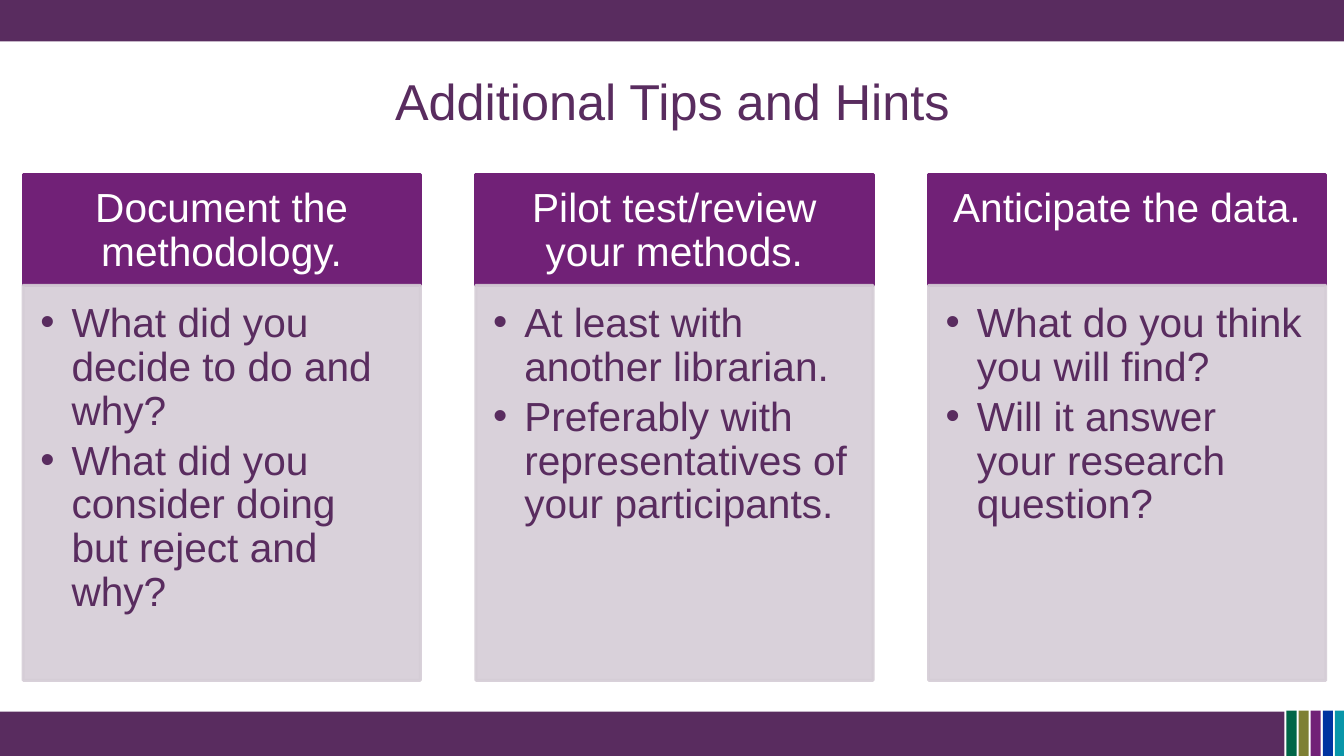
from lxml.etree import SubElement
from pptx import Presentation
from pptx.dml.color import RGBColor
from pptx.enum.shapes import MSO_SHAPE
from pptx.enum.text import MSO_ANCHOR, PP_ALIGN
from pptx.oxml.ns import qn
from pptx.util import Pt

PX = 9144  # EMU; 100 px to the inch
SLIDE_W, SLIDE_H = 1333, 750
FONT = "Arial"
COLORS = {
    "plum": "592C5F",
    "purple": "712177",
    "mist": "D5CDD6",
    "white": "FFFFFF",
    "green": "006647",
    "olive": "7E8034",
    "blue": "0033A0",
    "teal": "0996A9",
}
STRIPES = ["green", "olive", "purple", "blue", "teal"]
TIPS = [
    ("Document the methodology.",
     ["What did you decide to do and why?",
      "What did you consider doing but reject and why?"]),
    ("Pilot test/review your methods.",
     ["At least with another librarian.",
      "Preferably with representatives of your participants."]),
    ("Anticipate the data.",
     ["What do you think you will find?",
      "Will it answer your research question?"]),
]
COLUMN_LEFT, COLUMN_STEP, COLUMN_W = 23, 449, 394
HEADING_TOP, HEADING_H, DETAILS_H = 173, 110, 392
BULLET_INDENT = 31


def rgb(color):
    return RGBColor.from_string(COLORS[color])


def add_bar(slide, left, top, width, height, color):
    bar = slide.shapes.add_shape(
        MSO_SHAPE.RECTANGLE, left * PX, top * PX, width * PX, height * PX)
    bar.shadow.inherit = False
    bar.fill.solid()
    bar.fill.fore_color.rgb = rgb(color)
    bar.line.fill.background()
    return bar


def add_panel(slide, left, top, height, color):
    panel = add_bar(slide, left, top, COLUMN_W, height, color)
    panel.line.color.rgb = rgb(color)
    panel.line.width = Pt(2)
    return panel


def set_opacity(panel, percent):
    """Make both the fill and the outline of the panel translucent."""
    for tint in panel._element.spPr.iter(qn("a:srgbClr")):
        SubElement(tint, qn("a:alpha"), val=str(percent * 1000))


def set_margins(frame, left, top, right, bottom):
    frame.margin_left, frame.margin_top = left * PX, top * PX
    frame.margin_right, frame.margin_bottom = right * PX, bottom * PX


def write(frame, lines, size, color, align, anchor=MSO_ANCHOR.TOP):
    frame.word_wrap = True
    frame.vertical_anchor = anchor
    frame.text = "\n".join(lines)
    for paragraph in frame.paragraphs:
        paragraph.alignment = align
        paragraph.line_spacing = 0.9
        for run in paragraph.runs:
            run.font.name = FONT
            run.font.size = Pt(size)
            run.font.color.rgb = rgb(color)


def add_bullet(paragraph):
    properties = paragraph._p.get_or_add_pPr()
    properties.set("marL", str(BULLET_INDENT * PX))
    properties.set("indent", str(-BULLET_INDENT * PX))
    paragraph.space_after = Pt(4.35)
    SubElement(properties, qn("a:buFont"), typeface=FONT)
    SubElement(properties, qn("a:buChar"), char="•")


def add_title(slide, text):
    title = slide.shapes.add_textbox(67 * PX, 41 * PX, 1200 * PX, 125 * PX)
    write(title.text_frame, [text], 36, "plum", PP_ALIGN.CENTER, MSO_ANCHOR.MIDDLE)


def add_tip(slide, left, heading, details):
    heading_panel = add_panel(slide, left, HEADING_TOP, HEADING_H, "purple")
    set_margins(heading_panel.text_frame, 23, 13, 23, 13)
    write(heading_panel.text_frame, [heading], 29, "white", PP_ALIGN.CENTER)

    details_panel = add_panel(
        slide, left, HEADING_TOP + HEADING_H, DETAILS_H, "mist")
    set_opacity(details_panel, 90)
    set_margins(details_panel.text_frame, 17, 17, 23, 25)
    write(details_panel.text_frame, details, 29, "plum", PP_ALIGN.LEFT)
    for paragraph in details_panel.text_frame.paragraphs:
        add_bullet(paragraph)


def add_bands(slide):
    add_bar(slide, 0, -1, SLIDE_W, 42, "plum")
    add_bar(slide, 0, 706, 1274, 45, "plum")
    for index, color in enumerate(STRIPES):
        add_bar(slide, 1276 + 12 * index, 705, 10, 45, color)


def main():
    deck = Presentation()
    deck.slide_width, deck.slide_height = SLIDE_W * PX, SLIDE_H * PX
    slide = deck.slides.add_slide(deck.slide_layouts[6])
    add_bands(slide)
    add_title(slide, "Additional Tips and Hints")
    for index, (heading, details) in enumerate(TIPS):
        add_tip(slide, COLUMN_LEFT + COLUMN_STEP * index, heading, details)
    deck.save("out.pptx")


if __name__ == "__main__":
    main()
